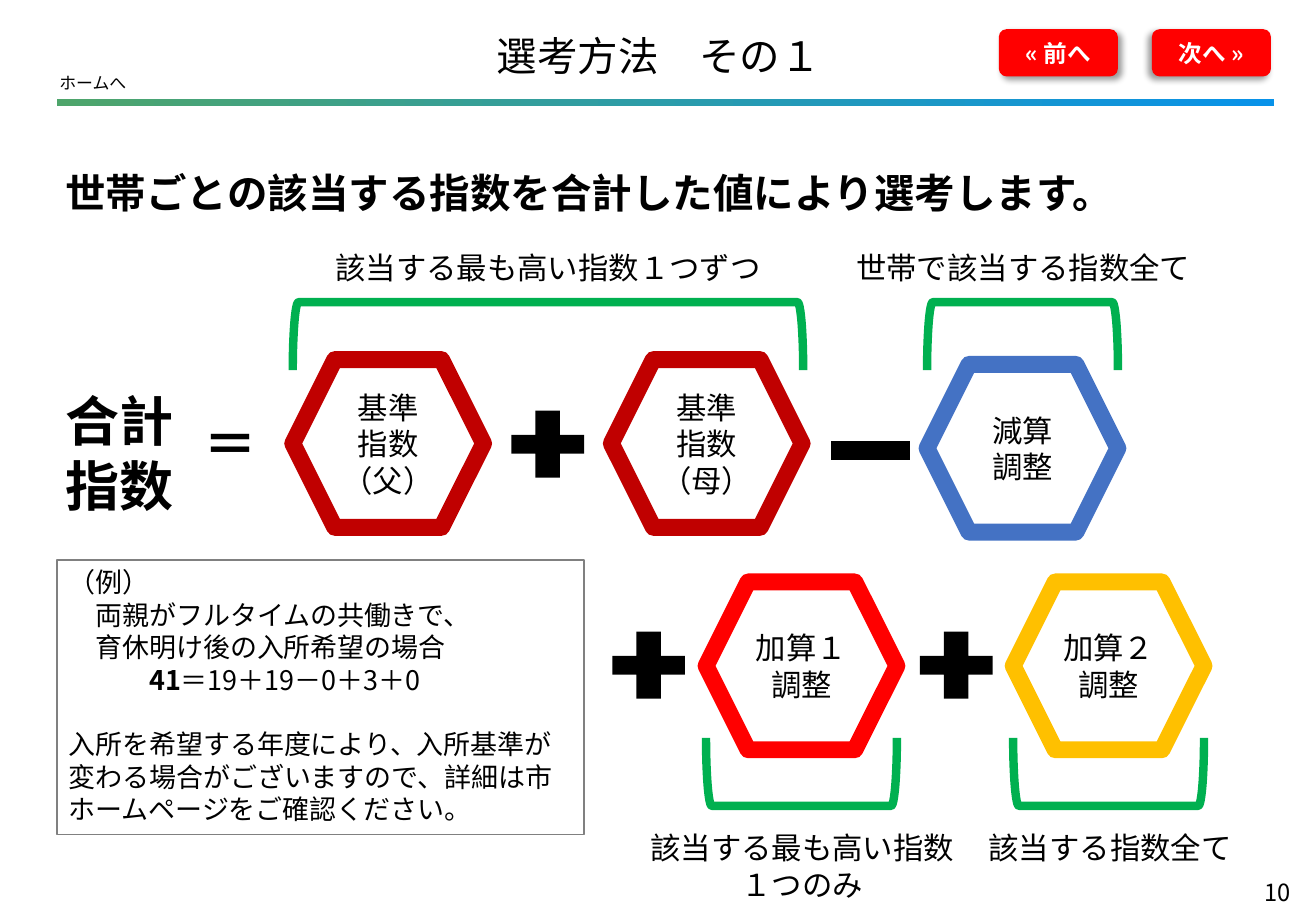
from lxml import etree
from pptx import Presentation
from pptx import util as u
from pptx.dml.color import RGBColor
from pptx.enum import shapes, text
from pptx.oxml.ns import qn

FONT = "Noto Sans CJK JP"
COLOURS = {
    "black": "000000", "white": "FFFFFF", "grey": "808080",
    "red": "FF0000", "dark red": "C00000", "amber": "FFC000",
    "blue": "4472C4", "green": "00B050",
    "bar start": "4EA56B", "bar end": "0892E9",
}
LINE_FACTOR = 1.2
HEXAGON_SIZE = (3.99, 3.51)
PLUS_SIZE = (1.52, 1.4)
BUTTON_SIZE = (2.49, 0.99)
BRACKET_DEPTH = 1.42
LEFT, CENTER = text.PP_ALIGN.LEFT, text.PP_ALIGN.CENTER
TOP, MIDDLE = text.MSO_ANCHOR.TOP, text.MSO_ANCHOR.MIDDLE
KIND = shapes.MSO_SHAPE


def colour(name):
    return RGBColor.from_string(COLOURS[name])


def apply(target, values):
    for name, value in values.items():
        setattr(target, name, value)


def add_span(para, wording, size, tint="black", bold=False):
    span = para.add_run()
    span.text = wording
    apply(span.font, {"name": FONT, "size": u.Pt(size), "bold": bold})
    span.font.color.rgb = colour(tint)
    properties = span.font._element
    etree.SubElement(properties, qn("a:ea"), typeface=FONT)


def add_para(frame, align, size, space_before=0):
    """Return the empty first paragraph of the frame, or a new one."""
    para = frame.paragraphs[0]
    if para.runs:
        para = frame.add_paragraph()
    apply(para, {"alignment": align, "line_spacing": u.Pt(size * LINE_FACTOR),
                 "space_before": u.Pt(space_before)})
    return para


def write(box, lines, size, align=CENTER, anchor=TOP, inset=True, **style):
    frame = box.text_frame
    apply(frame, {"word_wrap": True, "vertical_anchor": anchor})
    if not inset:
        apply(frame, {f"margin_{side}": 0
                      for side in ("left", "top", "right", "bottom")})
    for line in lines:
        add_span(add_para(frame, align, size), line, size, **style)


def add_text(slide, frame, lines, size, **style):
    box = slide.shapes.add_textbox(*map(u.Cm, frame))
    write(box, lines, size, **style)


def add_figure(slide, kind, frame, fill=None, line=None, width=1):
    figure = slide.shapes.add_shape(kind, *map(u.Cm, frame))
    figure.shadow.inherit = False
    if fill:
        figure.fill.solid()
        figure.fill.fore_color.rgb = colour(fill)
    else:
        figure.fill.background()
    if line:
        figure.line.color.rgb = colour(line)
        figure.line.width = u.Pt(width)
    else:
        figure.line.fill.background()
    return figure


def add_bar(slide):
    bar = add_figure(slide, KIND.RECTANGLE, (1.19, 2.08, 25.45, 0.13))
    bar.fill.gradient()
    bar.fill.gradient_angle = 0
    for stop, name in zip(bar.fill.gradient_stops, ("bar start", "bar end")):
        stop.color.rgb = colour(name)


def add_hexagon(slide, left, top, tint, lines):
    hexagon = add_figure(slide, KIND.HEXAGON, (left, top, *HEXAGON_SIZE),
                         line=tint, width=10)
    write(hexagon, lines, 18, anchor=MIDDLE)


def add_plus(slide, left, top):
    plus = add_figure(slide, KIND.CROSS, (left, top, *PLUS_SIZE), fill="black")
    plus.adjustments[0] = 0.36


def add_bracket(slide, left, top, width, rotation):
    """Place a turned bracket by the area it covers after rotation."""
    shift = (width - BRACKET_DEPTH) / 2
    frame = (left + shift, top - shift, BRACKET_DEPTH, width)
    bracket = add_figure(slide, KIND.LEFT_BRACKET, frame, line="green", width=5)
    bracket.rotation = rotation


def add_button(slide, left, label, shadow_angle):
    button = add_figure(slide, KIND.ROUNDED_RECTANGLE,
                        (left, 0.61, *BUTTON_SIZE), fill="red")
    write(button, [label], 14, anchor=MIDDLE, inset=False,
          tint="white", bold=True)
    effects = button._element.spPr.find(qn("a:effectLst"))
    shadow = etree.SubElement(
        effects, qn("a:outerShdw"), blurRad=str(u.Pt(4)), dist=str(u.Pt(3)),
        dir=str(shadow_angle * 60000), rotWithShape="0")
    shade = etree.SubElement(shadow, qn("a:srgbClr"), val=COLOURS["black"])
    etree.SubElement(shade, qn("a:alpha"), val="40000")


def add_example(slide):
    size, indent = 16, 0.56
    box = add_figure(slide, KIND.RECTANGLE, (1.19, 11.71, 11.02, 5.74),
                     line="grey", width=0.75)
    frame = box.text_frame
    apply(frame, {"word_wrap": True, "vertical_anchor": TOP})
    rows = [
        (0, 0, [("（例）", False)]),
        (1, 0, [("両親がフルタイムの共働きで、", False)]),
        (1, 0, [("育休明け後の入所希望の場合", False)]),
        (3, 0, [("41", True), ("＝19＋19－0＋3＋0", False)]),
        (0, size * LINE_FACTOR, [(
            "入所を希望する年度により、入所基準が変わる場合がございますので、"
            "詳細は市ホームページをご確認ください。", False)]),
    ]
    for level, space_before, spans in rows:
        para = add_para(frame, LEFT, size, space_before)
        para._p.get_or_add_pPr().set("marL", str(u.Cm(level * indent)))
        for wording, bold in spans:
            add_span(para, wording, size, bold=bold)


def main():
    deck = Presentation()
    apply(deck, {"slide_width": u.Cm(27.51), "slide_height": u.Cm(19.05)})
    slide = deck.slides.add_slide(deck.slide_layouts[6])

    add_bar(slide)
    add_text(slide, (25.68, 18.14, 2.06, 1.02), ["10"], 14, anchor=MIDDLE)
    add_text(slide, (1.19, 1.52, 1.5, 0.43), ["ホームへ"], 10, inset=False)
    add_example(slide)
    add_text(slide, (2.34, 0.53, 22.86, 1.6), ["選考方法　その１"], 24)
    for frame, lines, size in [
        ((1.12, 3.38, 25.55, 2.06),
         ["世帯ごとの該当する指数を合計した値により選考します。"], 24),
        ((1.12, 7.98, 4.11, 3), ["合計", "指数"], 32),
        ((4.01, 8.46, 1.7, 1.63), ["＝"], 32),
    ]:
        add_text(slide, frame, lines, size, align=LEFT, bold=True)

    for left, top, tint, lines in [
        (6.12, 7.52, "dark red", ["基準", "指数", "（父）"]),
        (12.78, 7.52, "dark red", ["基準", "指数", "（母）"]),
        (19.38, 7.62, "blue", ["減算", "調整"]),
        (14.76, 12.17, "red", ["加算１", "調整"]),
        (21.18, 12.17, "amber", ["加算２", "調整"]),
    ]:
        add_hexagon(slide, left, top, tint, lines)

    for left, top in [(10.69, 8.59), (12.8, 13.21), (19.23, 13.21)]:
        add_plus(slide, left, top)
    add_figure(slide, KIND.FLOWCHART_PROCESS, (17.37, 9.22, 1.65, 0.41),
               fill="black")

    for left, top, width, rotation in [
        (6.12, 6.32, 10.67, 90), (19.38, 6.32, 3.99, 90),
        (14.76, 15.43, 3.99, 270), (21.18, 15.43, 3.99, 270),
    ]:
        add_bracket(slide, left, top, width, rotation)

    for frame, lines in [
        ((6.12, 5.08, 10.67, 1.02), ["該当する最も高い指数１つずつ"]),
        ((17.48, 5.08, 7.82, 1.02), ["世帯で該当する指数全て"]),
        ((13.06, 17.22, 7.42, 1.8), ["該当する最も高い指数", "１つのみ"]),
        ((20.32, 17.22, 5.77, 1.02), ["該当する指数全て"]),
    ]:
        add_text(slide, frame, lines, 18)

    add_button(slide, 20.88, "« 前へ", 45)
    add_button(slide, 24.08, "次へ »", 135)
    deck.save("out.pptx")


if __name__ == "__main__":
    main()
